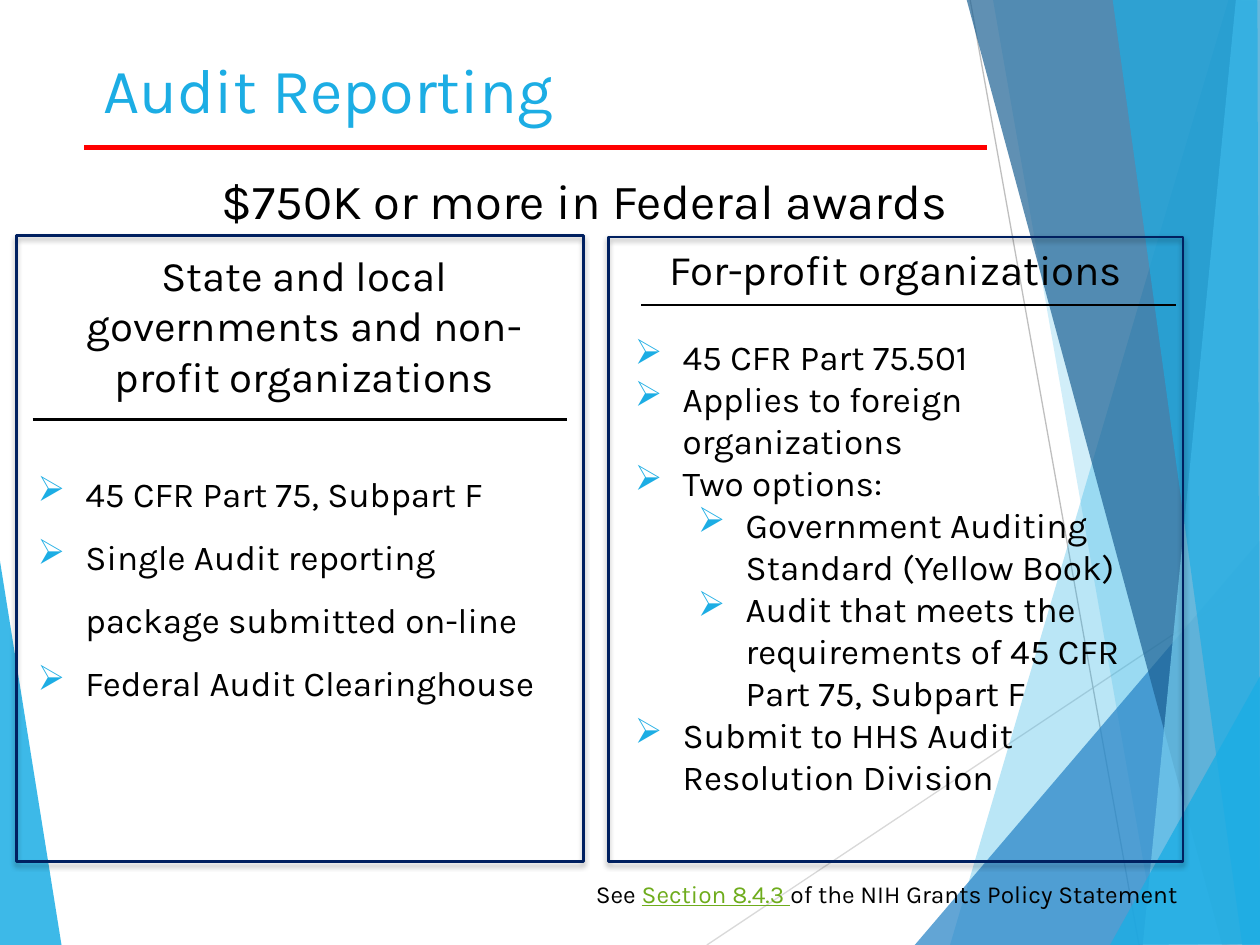
from dataclasses import dataclass

from lxml import etree
from pptx import Presentation
from pptx import util as u
from pptx.dml.color import RGBColor
from pptx.enum import shapes, text
from pptx.oxml.ns import qn


@dataclass(frozen=True)
class Theme:
    font: str = "Karla"
    accent: str = "1CADE4"
    blue: str = "2683C6"
    deep_blue: str = "1D6294"
    pale_blue: str = "77CEEF"
    black: str = "000000"
    navy: str = "002060"
    red: str = "FF0000"
    link: str = "6EAC1C"
    light_grey: str = "D9D9D9"
    grey: str = "BFBFBF"
    title: int = 36
    subtitle: int = 28
    heading: int = 24
    body: int = 20
    note: int = 14


THEME = Theme()
CENTER = text.PP_ALIGN.CENTER

SIDE_FACET = ([(-0.01, 4.39), (0.49, 7.51), (-0.01, 7.5)], THEME.accent, 85)
RIGHT_FACETS = [
    ([(9.75, 0), (7.54, 7.5), (10.02, 7.51), (10.01, 0.01)], THEME.accent, 30),
    ([(7.88, -0.01), (9.19, 7.5), (10.01, 7.5), (10.01, -0.01)], THEME.accent, 20),
    ([(7.26, 7.5), (10, 4.29), (10.01, 7.5)], THEME.blue, 72),
    ([(7.67, -0.01), (9.7, 7.5), (10.01, 7.49), (10.01, -0.01)], THEME.deep_blue, 70),
    ([(9.81, -0.01), (9.07, 7.5), (10.01, 7.5), (10, -0.01)], THEME.pale_blue, 70),
    ([(8.83, -0.01), (9.86, 7.5), (10, 7.5), (9.98, -0.01)], THEME.accent, 65),
    ([(8.81, 7.5), (10.01, 5.35), (10.01, 7.49)], THEME.accent, 80),
]
GOVERNMENT_POINTS = [
    (0, "45 CFR Part 75, Subpart F"),
    (0, "Single Audit reporting package submitted on-line"),
    (0, "Federal Audit Clearinghouse"),
]
FOR_PROFIT_POINTS = [
    (0, "45 CFR Part 75.501"),
    (0, "Applies to foreign organizations"),
    (0, "Two options:"),
    (1, "Government Auditing Standard (Yellow Book)"),
    (1, "Audit that meets the requirements of 45 CFR Part 75, Subpart F"),
    (0, "Submit to HHS Audit Resolution Division"),
]


def rgb(color):
    return RGBColor.from_string(color)


def apply_format(target, values):
    for name, value in values.items():
        setattr(target, name, value)


def add_child(parent, tag, **attributes):
    return etree.SubElement(parent, qn(tag), attributes)


def add_facet(slide, points, color, opacity):
    """Draw a borderless, partly transparent polygon."""
    corners = [(u.Inches(x), u.Inches(y)) for x, y in points]
    builder = slide.shapes.build_freeform(*corners[0])
    builder.add_line_segments(corners[1:], close=True)
    shape = builder.convert_to_shape()
    shape.shadow.inherit = False
    shape.fill.solid()
    shape.fill.fore_color.rgb = rgb(color)
    shape.line.fill.background()
    color_element = shape.element.spPr.find(qn("a:solidFill"))[0]
    add_child(color_element, "a:alpha", val=str(opacity * 1000))


def add_line(slide, start, end, color, width):
    ends = [u.Inches(value) for value in (*start, *end)]
    line = slide.shapes.add_connector(shapes.MSO_CONNECTOR.STRAIGHT, *ends)
    line.line.color.rgb = rgb(color)
    line.line.width = u.Pt(width)
    add_child(line.element.spPr, "a:effectLst")


def add_panel(slide, *box):
    """Draw an unfilled frame with a soft shadow below it."""
    panel = slide.shapes.add_shape(shapes.MSO_SHAPE.RECTANGLE, *map(u.Inches, box))
    panel.shadow.inherit = False
    panel.fill.background()
    panel.line.color.rgb = rgb(THEME.navy)
    panel.line.width = u.Pt(1.5)
    shadow = add_child(
        panel.element.spPr.find(qn("a:effectLst")), "a:outerShdw",
        blurRad=str(u.Pt(3)), dist=str(u.Pt(2)), dir="5400000", rotWithShape="0")
    shadow_color = add_child(shadow, "a:srgbClr", val=THEME.black)
    add_child(shadow_color, "a:alpha", val="35000")


def add_text_frame(slide, *box):
    frame = slide.shapes.add_textbox(*map(u.Inches, box)).text_frame
    frame.word_wrap = True
    return frame


def add_run(paragraph, words, size, color=THEME.black, **values):
    run = paragraph.add_run()
    run.text = words
    apply_format(run.font, {"name": THEME.font, "size": u.Pt(size), **values})
    run.font.color.rgb = rgb(color)


def add_bullet(frame, level, words, **values):
    paragraph = frame.add_paragraph()
    properties = paragraph._p.get_or_add_pPr()
    properties.set("marL", str(u.Inches(0.38 + 0.5 * level)))
    properties.set("indent", str(u.Inches(-0.38)))
    bullet_color = add_child(properties, "a:buClr")
    add_child(bullet_color, "a:srgbClr", val=THEME.accent)
    add_child(properties, "a:buChar", char="➢")
    apply_format(paragraph, {"level": level, **values})
    add_run(paragraph, words, THEME.body)


def add_column(slide, box, heading, points, gap, line_spacing):
    """Write a centred heading, a gap in points, then the bullets."""
    frame = add_text_frame(slide, *box)
    paragraph = frame.paragraphs[0]
    paragraph.alignment = CENTER
    add_run(paragraph, heading, THEME.heading)
    for index, (level, words) in enumerate(points):
        add_bullet(frame, level, words, line_spacing=line_spacing,
                   space_before=u.Pt(0 if index else gap))


def add_background(slide):
    add_facet(slide, *SIDE_FACET)
    add_line(slide, (5.61, 7.5), (10.01, 4.57), THEME.light_grey, 0.75)
    add_line(slide, (7.7, 0), (9.04, 7.5), THEME.grey, 0.75)
    for facet in RIGHT_FACETS:
        add_facet(slide, *facet)


def add_subtitle(slide):
    frame = add_text_frame(slide, 1.5, 1.25, 6.4, 0.64)
    apply_format(frame, {"margin_top": u.Inches(0.1), "margin_right": u.Inches(0.22)})
    frame.paragraphs[0].alignment = CENTER
    add_run(frame.paragraphs[0], "$750K or more in Federal awards", THEME.subtitle)


def add_note(slide):
    paragraph = add_text_frame(slide, 4.63, 6.93, 5.12, 0.34).paragraphs[0]
    add_run(paragraph, "See ", THEME.note)
    add_run(paragraph, "Section 8.4.3 ", THEME.note, THEME.link, underline=True)
    add_run(paragraph, "of the NIH Grants Policy Statement", THEME.note)


def main():
    presentation = Presentation()
    apply_format(presentation, {"slide_width": u.Inches(10), "slide_height": u.Inches(7.5)})
    slide = presentation.slides.add_slide(presentation.slide_layouts[6])

    add_background(slide)
    add_subtitle(slide)
    add_column(slide, (0.2, 1.93, 4.43, 3.67),
               "State and local governments and non-profit organizations",
               GOVERNMENT_POINTS, gap=29, line_spacing=1.5)
    add_line(slide, (0.26, 3.33), (4.5, 3.33), THEME.black, 1.5)
    add_panel(slide, 0.13, 1.87, 4.5, 4.97)
    add_panel(slide, 4.83, 1.88, 4.56, 4.96)
    add_column(slide, (4.94, 1.88, 4.34, 4.78), "For-profit organizations",
               FOR_PROFIT_POINTS, gap=24, line_spacing=1.0)
    title = add_text_frame(slide, 0.72, 0.35, 6.94, 1.44)
    add_run(title.paragraphs[0], "Audit Reporting", THEME.title, THEME.accent)
    add_line(slide, (0.67, 1.17), (7.83, 1.17), THEME.red, 3)
    add_line(slide, (5.09, 2.42), (9.33, 2.42), THEME.black, 1.5)
    add_note(slide)

    presentation.save("out.pptx")


if __name__ == "__main__":
    main()
